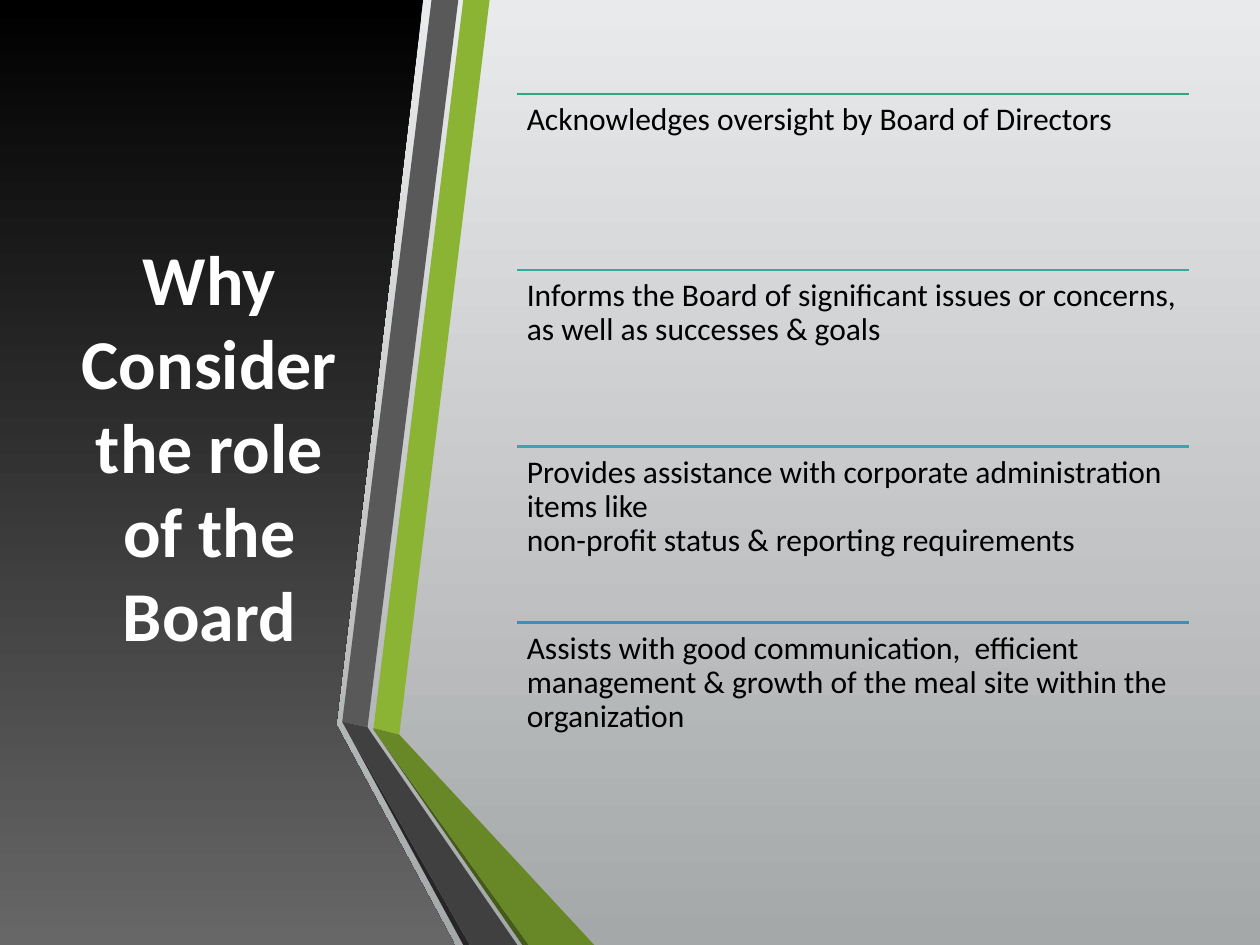
from lxml import etree
from pptx import Presentation
from pptx import util as u
from pptx.dml.color import RGBColor
from pptx.enum import shapes, text
from pptx.oxml.ns import qn

FONT = "Calibri"
PAGE_WIDTH, PAGE_HEIGHT = 25.4, 19.05

PANEL = [(0, 0), (8.53, 0), (6.78, 14.61), (9.17, 19.05), (0, 19.05)]

RIBBONS = [
    ("8BB434", [(0.63, 14.68), (1.15, 14.81), (2.97, 0), (2.44, 0)]),
    ("595959", [(2.34, 0), (1.8, 0), (0, 14.55), (0.51, 14.66)]),
    ("262626", [(0, 14.55), (2.44, 19.05), (2.57, 19.05)]),
    ("465A1A", [(0.63, 14.71), (3.63, 19.05), (3.76, 19.05)]),
    ("688727", [(0.63, 14.71), (3.76, 19.05), (5.08, 19.05), (1.15, 14.81), (0.63, 14.68)]),
    ("404040", [(3.53, 19.05), (0.61, 14.81), (0.51, 14.66), (0, 14.55), (2.57, 19.05)]),
]

REASONS = [
    ("33A583", ["Acknowledges oversight by Board of Directors"]),
    ("34AA9C", ["Informs the Board of significant issues or concerns,",
                "as well as successes & goals"]),
    ("34A7AF", ["Provides assistance with corporate administration items like",
                "non-profit status & reporting requirements"]),
    ("3594B4", ["Assists with good communication,  efficient management & growth "
                "of the meal site within the organization"]),
]


def color(hex_string):
    return RGBColor.from_string(hex_string)


def fill_downward(fill, top_color, bottom_color):
    fill.gradient()
    fill.gradient_angle = 270
    for stop, hex_string in zip(fill.gradient_stops, (top_color, bottom_color)):
        stop.color.rgb = color(hex_string)


def add_span(para, words, size, hex_string, bold=False):
    span = para.add_run()
    span.text = words
    span.font.name = FONT
    span.font.size = u.Pt(size)
    span.font.bold = bold
    span.font.color.rgb = color(hex_string)


def add_outline(page, left, top, points):
    corners = [(u.Cm(left + x), u.Cm(top + y)) for x, y in points]
    builder = page.shapes.build_freeform(*corners[0])
    builder.add_line_segments(corners[1:], close=True)
    outline = builder.convert_to_shape()
    outline.shadow.inherit = False
    outline.line.fill.background()
    return outline


def add_title_panel(page, left, top):
    panel = add_outline(page, left, top, PANEL)
    fill_downward(panel.fill, "000000", "676767")

    title = page.shapes.title
    panel.element.addnext(title.element)
    title.left, title.top = u.Cm(left + 1.12), u.Cm(top + 1.9)
    title.width, title.height = u.Cm(6.2), u.Cm(14.17)
    frame = title.text_frame
    frame.word_wrap = True
    frame.auto_size = text.MSO_AUTO_SIZE.NONE
    frame.vertical_anchor = text.MSO_ANCHOR.MIDDLE
    para = frame.paragraphs[0]
    para.alignment = text.PP_ALIGN.CENTER
    add_span(para, "Why Consider the role of the Board", 40, "FFFFFF", bold=True)


def add_ribbons(page, left, top):
    for hex_string, points in RIBBONS:
        ribbon = add_outline(page, left, top, points)
        ribbon.fill.solid()
        ribbon.fill.fore_color.rgb = color(hex_string)


def add_rule(page, left, top, width, hex_string):
    rule = page.shapes.add_connector(
        shapes.MSO_CONNECTOR.STRAIGHT,
        u.Cm(left), u.Cm(top), u.Cm(left + width), u.Cm(top))
    rule.line.color.rgb = color(hex_string)
    rule.line.width = u.Pt(1.25)
    etree.SubElement(rule.element.spPr, qn("a:effectLst"))


def add_reasons(page, left, top, width, height):
    row_height = height / len(REASONS)
    for index, (hex_string, lines) in enumerate(REASONS):
        row_top = top + index * row_height
        add_rule(page, left, row_top, width, hex_string)
        box = page.shapes.add_textbox(
            u.Cm(left), u.Cm(row_top), u.Cm(width), u.Cm(row_height))
        frame = box.text_frame
        frame.word_wrap = True
        frame.margin_left = frame.margin_right = u.Cm(0.19)
        frame.margin_top = frame.margin_bottom = u.Cm(0.19)
        para = frame.paragraphs[0]
        para.line_spacing = 0.9
        for number, line in enumerate(lines):
            if number:
                para.add_line_break()
            add_span(para, line, 18, "000000")


def main():
    deck = Presentation()
    deck.slide_width, deck.slide_height = u.Cm(PAGE_WIDTH), u.Cm(PAGE_HEIGHT)
    page = deck.slides.add_slide(deck.slide_layouts.get_by_name("Title Only"))
    fill_downward(page.background.fill, "E9EAEB", "A5A8A9")
    add_title_panel(page, 0, 0)
    add_ribbons(page, 6.9, 0)
    add_reasons(page, 10.43, 1.9, 13.53, 14.2)
    deck.save("out.pptx")


if __name__ == "__main__":
    main()
